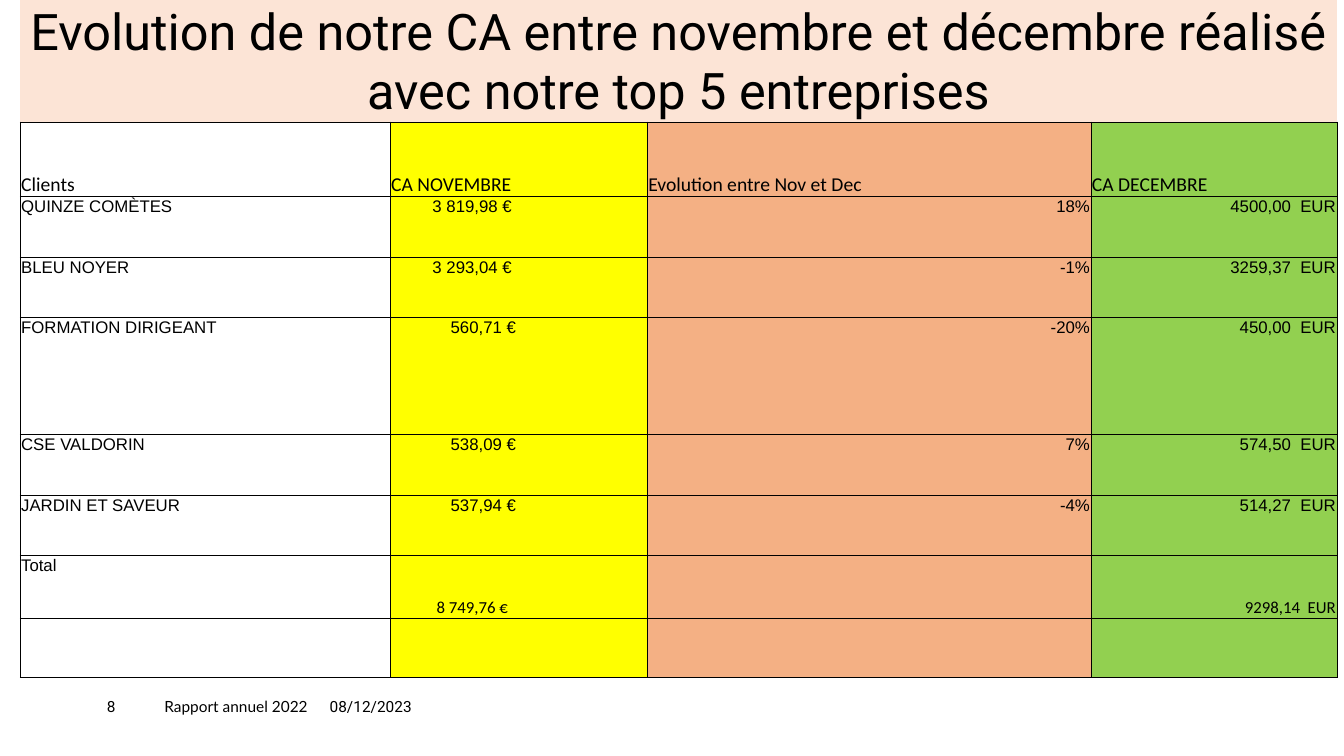
from lxml.etree import SubElement
from pptx import Presentation
from pptx.dml.color import RGBColor
from pptx.enum.text import MSO_ANCHOR, PP_ALIGN
from pptx.oxml.ns import qn
from pptx.util import Inches, Pt

COLORS = {"ink": "000000", "paper": "FFFFFF", "heading": "FCE4D6",
          "november": "FFFF00", "evolution": "F4B084", "december": "92D050"}
COLUMN_FILLS = ["paper", "november", "evolution", "december"]
COLUMN_WIDTHS = [36.7, 25.5, 44, 24.4]
ROW_HEIGHTS = [11.1, 7.4, 6, 6, 11.6, 6, 6, 6.2, 5.9]

HEADING = "Evolution de notre CA entre novembre et décembre réalisé avec notre top 5 entreprises"
LABELS = ["Clients", "CA NOVEMBRE", "Evolution entre Nov et Dec", "CA DECEMBRE"]
CLIENTS = [
    ("QUINZE COMÈTES", "3 819,98 €", "18%", "4500,00  EUR"),
    ("BLEU NOYER", "3 293,04 €", "-1%", "3259,37  EUR"),
    ("FORMATION DIRIGEANT", "560,71 €", "-20%", "450,00  EUR"),
    ("CSE VALDORIN", "538,09 €", "7%", "574,50  EUR"),
    ("JARDIN ET SAVEUR", "537,94 €", "-4%", "514,27  EUR"),
]
TOTAL = ("Total", "8 749,76 €", "", "9298,14  EUR")
FOOTER = [("8", 10.6, 5.7, "Roboto"),
          ("Rapport annuel 2022", 16.3, 16.4, "Lato"),
          ("08/12/2023", 32.7, 14.4, "Roboto")]


class ReportSlide:
    """A slide on a grid whose columns and rows are a tenth of an inch."""

    def __init__(self, deck):
        self.slide = deck.slides.add_slide(deck.slide_layouts[6])

    def grid(self, *units):
        return [Inches(unit / 10) for unit in units]

    def style(self, paragraph, text, font, size, align=PP_ALIGN.LEFT):
        paragraph.text = text
        paragraph.alignment = align
        paragraph.font.name = font
        paragraph.font.size = Pt(size)
        paragraph.font.color.rgb = RGBColor.from_string(COLORS["ink"])

    def footer(self, text, left, width, font):
        frame = self.slide.shapes.add_textbox(*self.grid(left, 69.2, width, 2.7)).text_frame
        frame.word_wrap = True
        frame.margin_left = frame.margin_right = frame.margin_top = frame.margin_bottom = 0
        self.style(frame.paragraphs[0], text, font, 11)

    def table(self, left, top, widths, heights):
        table = self.slide.shapes.add_table(
            len(heights), len(widths), *self.grid(left, top, sum(widths), sum(heights))).table
        table.first_row = table.horz_banding = False
        for column, width in zip(table.columns, self.grid(*widths)):
            column.width = width
        for row, height in zip(table.rows, self.grid(*heights)):
            row.height = height
        return table

    def cell(self, cell, fill, lined_sides="LRTB"):
        properties = cell._tc.get_or_add_tcPr()
        for side in "LRTB":
            line = SubElement(properties, qn(f"a:ln{side}"), w=str(Pt(0.5)))
            if side in lined_sides:
                solid = SubElement(line, qn("a:solidFill"))
                SubElement(solid, qn("a:srgbClr"), val=COLORS["ink"])
            else:
                SubElement(line, qn("a:noFill"))
        cell.fill.solid()
        cell.fill.fore_color.rgb = RGBColor.from_string(COLORS[fill])
        cell.margin_left = cell.margin_right = cell.margin_top = Inches(0.01)
        cell.margin_bottom = 0

    def cell_text(self, cell, text, font, size, align=PP_ALIGN.LEFT,
                  anchor=MSO_ANCHOR.TOP, indent=0):
        cell.vertical_anchor = anchor
        paragraph = cell.text_frame.paragraphs[0]
        self.style(paragraph, text, font, size, align)
        if indent:
            paragraph._p.get_or_add_pPr().set("marL", str(Inches(indent)))


def november_indent(amount, is_total):
    """Left indent in inches that sets the amounts below one another."""
    if is_total:
        return 0.45
    return 0.41 if len(amount) > 8 else 0.59


def fill_table(report):
    table = report.table(2, 0, COLUMN_WIDTHS, ROW_HEIGHTS)
    for row in range(len(ROW_HEIGHTS)):
        for column, fill in enumerate(COLUMN_FILLS):
            if row == 0:
                report.cell(table.cell(row, column), "heading", "B")
            else:
                report.cell(table.cell(row, column), fill)

    heading = table.cell(0, 0)
    heading.merge(table.cell(0, len(LABELS) - 1))
    report.cell_text(heading, HEADING, "Roboto", 36, PP_ALIGN.CENTER, MSO_ANCHOR.BOTTOM)
    for column, label in enumerate(LABELS):
        report.cell_text(table.cell(1, column), label, "Calibri", 14, anchor=MSO_ANCHOR.BOTTOM)

    for row, values in enumerate([*CLIENTS, TOTAL], start=2):
        for column, value in enumerate(values):
            if not value:
                continue
            total_amount = values is TOTAL and column > 0
            report.cell_text(
                table.cell(row, column), value,
                "Calibri" if total_amount else "Arial", 12,
                PP_ALIGN.RIGHT if column > 1 else PP_ALIGN.LEFT,
                MSO_ANCHOR.BOTTOM if total_amount else MSO_ANCHOR.TOP,
                november_indent(value, total_amount) if column == 1 else 0)


def main():
    deck = Presentation()
    deck.slide_width, deck.slide_height = Inches(13.33), Inches(7.5)
    report = ReportSlide(deck)
    for entry in FOOTER:
        report.footer(*entry)
    fill_table(report)
    deck.save("out.pptx")


if __name__ == "__main__":
    main()
